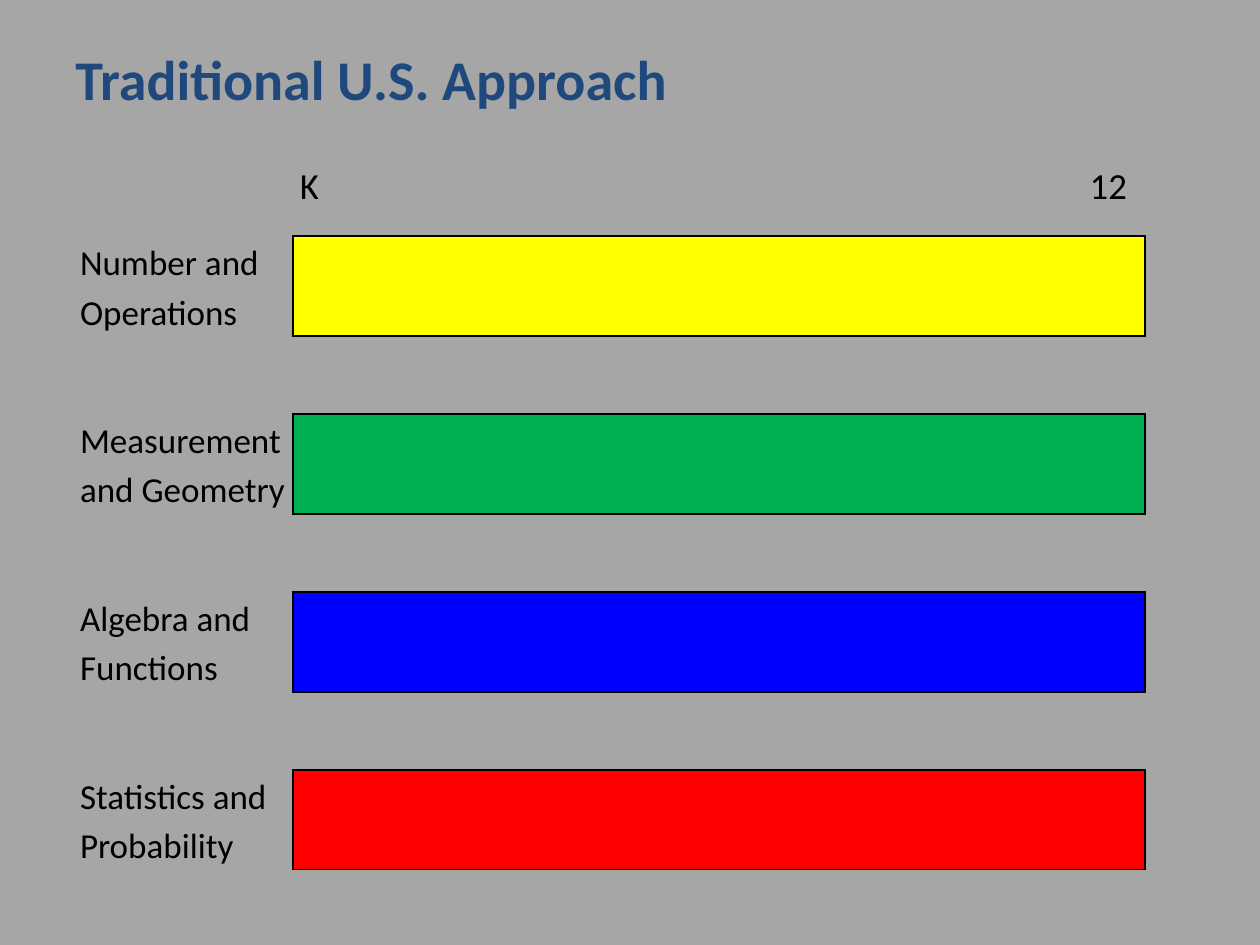
"""Build the slide on the traditional U.S. approach to K-12 mathematics."""
import pptx
import pptx.util
import pptx.dml.color
import pptx.oxml
import pptx.oxml.ns

RGB = pptx.dml.color.RGBColor
BLACK = RGB(0, 0, 0)
NAVY = RGB(0x1F, 0x49, 0x7D)
GRAY = RGB(0xA6, 0xA6, 0xA6)
YELLOW = RGB(0xFF, 0xFF, 0)
GREEN = RGB(0, 0xB0, 0x50)
BLUE = RGB(0, 0, 0xFF)
RED = RGB(0xFF, 0, 0)

TITLE = "Traditional U.S. Approach"
GRADES = "K\t12"
STRANDS = [
    ("Number and Operations", YELLOW),
    ("Measurement and Geometry", GREEN),
    ("Algebra and Functions", BLUE),
    ("Statistics and Probability", RED),
]

LEFT, TOP = 73, 158
COLS = (220, 852)
GAP, BAR = 78, 100
INSET = 7
TAB = 827


def px(n):
    return pptx.util.Emu(n * 914400 // 126)


def write(frame, text, size=20, color=BLACK, bold=False, space=None, tab=None):
    frame.word_wrap = True
    par = frame.paragraphs[0]
    par.line_spacing = space
    if tab:
        stops = pptx.oxml.parse_xml(
            f'<a:tabLst {pptx.oxml.ns.nsdecls("a")}>'
            f'<a:tab pos="{px(tab)}" algn="r"/></a:tabLst>')
        par._p.get_or_add_pPr().append(stops)
    run = par.add_run()
    run.text = text
    font = run.font
    font.name, font.size, font.bold = "Calibri", pptx.util.Pt(size), bold
    font.color.rgb = color


def edge(cell, sides):
    props = cell._tc.get_or_add_tcPr()
    for side in "LRTB":
        ink = (f'<a:solidFill><a:srgbClr val="{BLACK}"/></a:solidFill>'
               if side in sides else "<a:noFill/>")
        props.append(pptx.oxml.parse_xml(
            f'<a:ln{side} {pptx.oxml.ns.nsdecls("a")} w="12700">{ink}</a:ln{side}>'))


def chart(slide):
    count = 2 * len(STRANDS)
    frame = slide.shapes.add_table(
        count, 2, px(LEFT), px(TOP), px(sum(COLS)), px((GAP + BAR) * len(STRANDS)))
    grid = frame.table
    grid.first_row = grid.horz_banding = False
    for col, width in zip(grid.columns, COLS):
        col.width = px(width)
    for i, row in enumerate(grid.rows):
        odd = i % 2
        row.height = px(BAR if odd else GAP)
        label, bar = row.cells
        for cell in (label, bar):
            cell.margin_left = cell.margin_right = px(INSET)
            cell.margin_top = cell.margin_bottom = 0
        edge(label, "R" if odd else "")
        edge(bar, "LRTB" if odd else "TB" if i else "B")
        label.fill.background()
        if odd:
            name, color = STRANDS[i // 2]
            write(label.text_frame, name, space=1.15)
            bar.fill.solid()
            bar.fill.fore_color.rgb = color
        else:
            bar.fill.background()
    write(grid.cell(0, 1).text_frame, GRADES, size=21, space=1.15, tab=TAB)


def main():
    deck = pptx.Presentation()
    deck.slide_width, deck.slide_height = px(1260), px(945)
    slide = deck.slides.add_slide(deck.slide_layouts[6])
    back = slide.background.fill
    back.solid()
    back.fore_color.rgb = GRAY
    chart(slide)
    title = slide.shapes.add_textbox(px(63), px(38), px(1134), px(119))
    write(title.text_frame, TITLE, size=32, color=NAVY, bold=True)
    deck.save("out.pptx")


if __name__ == "__main__":
    main()
